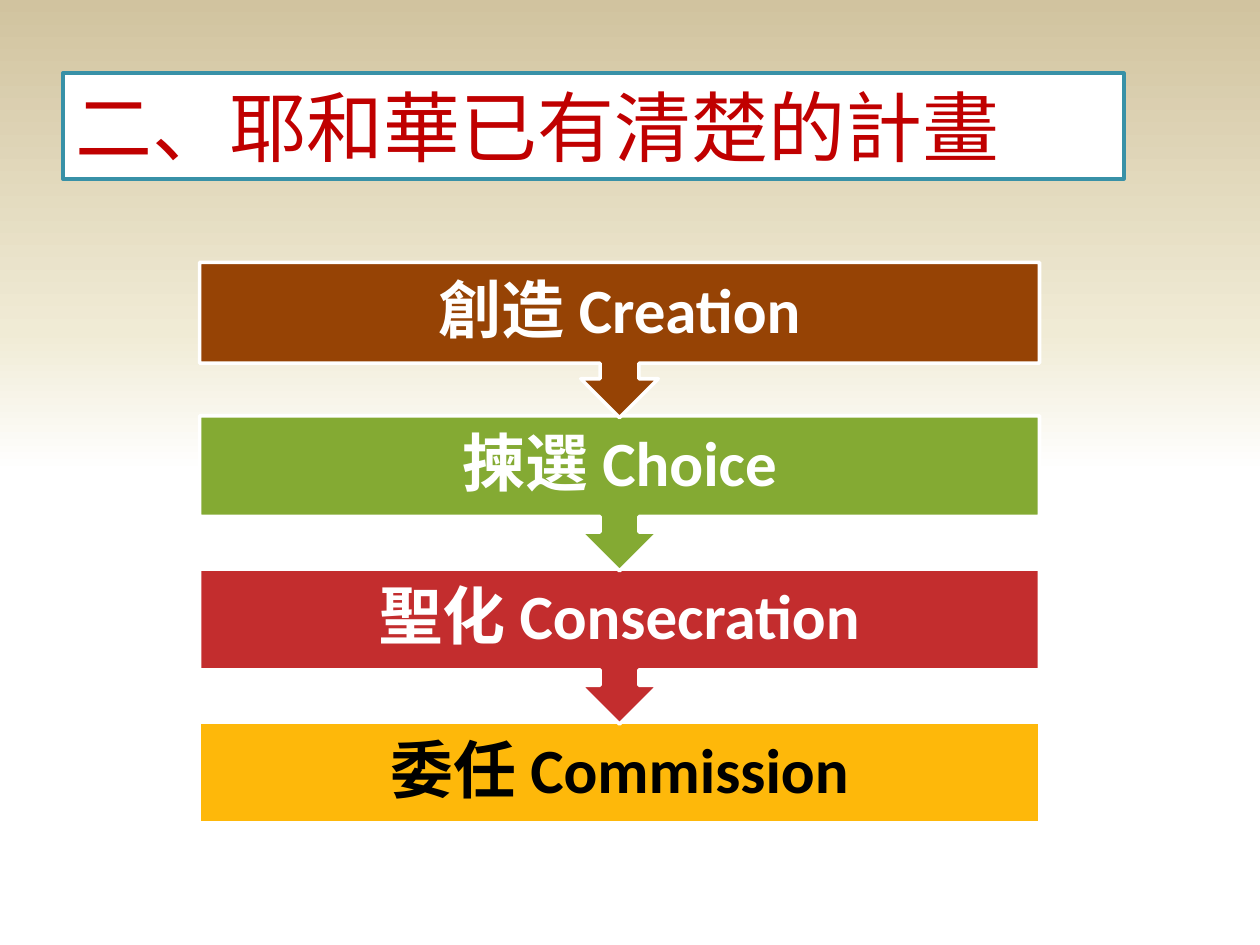
from copy import deepcopy

from pptx import Presentation
from pptx.dml.color import RGBColor
from pptx.enum.shapes import MSO_SHAPE as SHAPE
from pptx.enum.text import MSO_ANCHOR as ANCHOR, PP_ALIGN as ALIGN
from pptx.oxml.ns import qn
from pptx.util import Pt

COLORS = {
    "white": "FFFFFF", "black": "000000", "cream": "F0EBD5", "tan": "D1C39F",
    "teal": "3891A7", "title": "C00000", "brown": "964305",
    "green": "84AA33", "red": "C32D2E", "amber": "FEB80A",
}


def rgb(name):
    return RGBColor.from_string(COLORS[name])


class Deck:
    """Style and current slide, with a method for each kind of element."""

    def __init__(self, prs):
        self.s = prs.slides.add_slide(prs.slide_layouts[6])

    def background(self, stops, angle):
        fill = self.s.background.fill
        fill.gradient()
        fill.gradient_angle = angle
        gs_list = next(self.s.element.iter(qn("a:gsLst")))
        while len(gs_list) < len(stops):
            gs_list.append(deepcopy(gs_list[-1]))
        for stop, (position, color) in zip(fill.gradient_stops, stops):
            stop.position = position
            stop.color.rgb = rgb(color)

    def box(self, kind, left, top, width, height, fill, line):
        sp = self.s.shapes.add_shape(kind, Pt(left), Pt(top), Pt(width), Pt(height))
        sp.shadow.inherit = False
        sp.fill.solid()
        sp.fill.fore_color.rgb = rgb(fill)
        sp.line.color.rgb = rgb(line)
        sp.line.width = Pt(2)
        return sp

    def label(self, sp, text, font, size, color, align, bold=False):
        tf = sp.text_frame
        tf.word_wrap = True
        tf.vertical_anchor = ANCHOR.MIDDLE
        p = tf.paragraphs[0]
        p.text = text
        p.alignment = align
        p.font.name = font
        p.font.size = Pt(size)
        p.font.bold = bold
        p.font.color.rgb = rgb(color)
        return p

    def title(self, text):
        sp = self.box(SHAPE.RECTANGLE, 36, 41.8, 606.2, 60.5, "white", "teal")
        self.label(sp, text, "Lato", 44, "title", ALIGN.LEFT)

    def step(self, text, top, fill, color, last):
        kind, height = (SHAPE.RECTANGLE, 57.6) if last else (SHAPE.DOWN_ARROW_CALLOUT, 88.6)
        sp = self.box(kind, 114, top, 480, height, fill, "white")
        sp.text_frame.margin_top = sp.text_frame.margin_bottom = 0
        p = self.label(sp, text, "Calibri", 36, color, ALIGN.CENTER, True)
        p.line_spacing = 0.9

    def steps(self, items, top, pitch):
        for i, item in reversed(list(enumerate(items))):
            text, fill, color = item
            self.step(text, top + i * pitch, fill, color, i == len(items) - 1)


def main():
    prs = Presentation()
    prs.slide_width, prs.slide_height = Pt(720), Pt(540)
    deck = Deck(prs)
    deck.background([(0.5, "white"), (0.65, "cream"), (1, "tan")], 90)
    deck.title("二、耶和華已有清楚的計畫")
    deck.steps([
        ("創造 Creation", "brown", "white"),
        ("揀選 Choice", "green", "white"),
        ("聖化 Consecration", "red", "white"),
        ("委任 Commission", "amber", "black"),
    ], top=150, pitch=87.6)
    prs.save("out.pptx")


if __name__ == "__main__":
    main()
